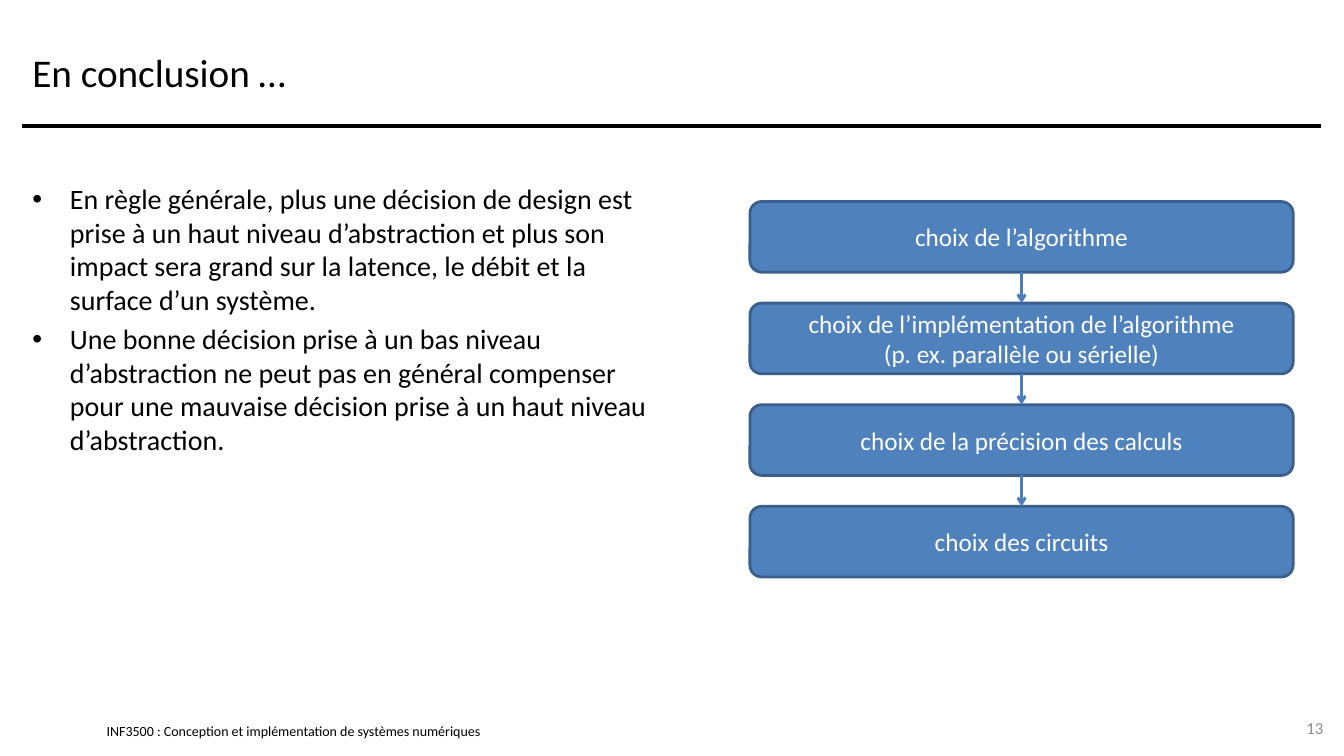
import dataclasses

import lxml.etree
import pptx
import pptx.dml.color
import pptx.enum.shapes
import pptx.enum.text
import pptx.oxml.ns
import pptx.util

Cm = pptx.util.Cm
Pt = pptx.util.Pt
Align = pptx.enum.text.PP_ALIGN
Anchor = pptx.enum.text.MSO_ANCHOR

TITLE = "En conclusion …"
CONCLUSIONS = [
    "En règle générale, plus une décision de design est prise à un haut niveau d’abstraction "
    "et plus son impact sera grand sur la latence, le débit et la surface d’un système.",
    "Une bonne décision prise à un bas niveau d’abstraction ne peut pas en général compenser "
    "pour une mauvaise décision prise à un haut niveau d’abstraction.",
]
CHOICES = [
    "choix de l’algorithme",
    "choix de l’implémentation de l’algorithme\n(p. ex. parallèle ou sérielle)",
    "choix de la précision des calculs",
    "choix des circuits",
]
COURSE = "INF3500 : Conception et implémentation de systèmes numériques"
PAGE_NUMBER = "13"

MARGIN = 0.56
CONTENT_WIDTH = 32.74
RULE_TOP = 3.18
CHOICE_LEFT, CHOICE_TOP = 18.9, 5.08
CHOICE_WIDTH, CHOICE_HEIGHT = 13.69, 1.78
CHOICE_PITCH = 2.56


@dataclasses.dataclass(frozen=True)
class Theme:
    font: str = "Calibri"
    ink: str = "000000"
    muted: str = "8C8C8C"
    light: str = "FFFFFF"
    box_fill: str = "4F81BD"
    box_line: str = "3A5F8C"
    arrow: str = "4B7EBC"
    title_size: int = 28
    body_size: int = 20
    choice_size: int = 18
    number_size: int = 12
    footer_size: int = 10
    rule_width: int = 3
    line_width: int = 2


THEME = Theme()


def rgb(value):
    return pptx.dml.color.RGBColor.from_string(value)


def place(shape, left, top, width, height):
    shape.left, shape.top = Cm(left), Cm(top)
    shape.width, shape.height = Cm(width), Cm(height)


def write(shape, texts, size, color, align=Align.LEFT, anchor=Anchor.MIDDLE):
    frame = shape.text_frame
    frame.word_wrap = True
    frame.auto_size = pptx.enum.text.MSO_AUTO_SIZE.NONE
    frame.vertical_anchor = anchor
    for index, text in enumerate(texts):
        para = frame.add_paragraph() if index else frame.paragraphs[0]
        para.text = text
        para.alignment = align
        for span in para.runs:
            span.font.name = THEME.font
            span.font.size = Pt(size)
            span.font.color.rgb = rgb(color)
    return frame


def add_line(page, start, end, color, width):
    line = page.shapes.add_connector(
        pptx.enum.shapes.MSO_CONNECTOR.STRAIGHT, *map(Cm, start + end))
    line.line.color.rgb = rgb(color)
    line.line.width = Pt(width)
    lxml.etree.SubElement(line._element.spPr, pptx.oxml.ns.qn("a:effectLst"))
    return line


def add_headings(page):
    title, body = page.placeholders
    place(title, MARGIN, 0.43, CONTENT_WIDTH, 2.74)
    write(title, [TITLE], THEME.title_size, THEME.ink)
    add_line(page, (MARGIN, RULE_TOP), (MARGIN + CONTENT_WIDTH, RULE_TOP),
             THEME.ink, THEME.rule_width)
    place(body, MARGIN, 4.45, 16.08, 12.9)
    frame = write(body, CONCLUSIONS, THEME.body_size, THEME.ink, anchor=Anchor.TOP)
    for index, para in enumerate(frame.paragraphs):
        properties = para._p.get_or_add_pPr()
        properties.set("marL", str(Cm(0.95)))
        properties.set("indent", str(-Cm(0.95)))
        para.space_before = Pt(4 if index else 0)


def add_choice(page, index, text):
    box = page.shapes.add_shape(
        pptx.enum.shapes.MSO_SHAPE.ROUNDED_RECTANGLE, Cm(CHOICE_LEFT),
        Cm(CHOICE_TOP + index * CHOICE_PITCH), Cm(CHOICE_WIDTH), Cm(CHOICE_HEIGHT))
    box.shadow.inherit = False
    box.fill.solid()
    box.fill.fore_color.rgb = rgb(THEME.box_fill)
    box.line.color.rgb = rgb(THEME.box_line)
    box.line.width = Pt(THEME.line_width)
    write(box, [text], THEME.choice_size, THEME.light, Align.CENTER)
    return box


def add_flow(page):
    boxes = [add_choice(page, index, text) for index, text in enumerate(CHOICES)]
    for upper, lower in zip(boxes, boxes[1:]):
        arrow = add_line(page, (0, 0), (0, 0), THEME.arrow, THEME.line_width)
        arrow.begin_connect(upper, 2)
        arrow.end_connect(lower, 0)
        head = lxml.etree.SubElement(arrow.line._get_or_add_ln(), pptx.oxml.ns.qn("a:tailEnd"))
        head.set("type", "arrow")


def add_footer(page):
    course = page.shapes.add_textbox(Cm(2.69), Cm(18.21), Cm(12.98), Cm(0.43))
    frame = write(course, [COURSE], THEME.footer_size, THEME.ink)
    frame.margin_left = frame.margin_right = frame.margin_top = frame.margin_bottom = 0
    number = page.shapes.add_textbox(Cm(31.9), Cm(17.83), Cm(1.7), Cm(1.02))
    write(number, [PAGE_NUMBER], THEME.number_size, THEME.muted, Align.RIGHT)


def main():
    deck = pptx.Presentation()
    deck.slide_width, deck.slide_height = Cm(33.87), Cm(19.05)
    page = deck.slides.add_slide(deck.slide_layouts[1])
    add_headings(page)
    add_flow(page)
    add_footer(page)
    deck.save("out.pptx")


if __name__ == "__main__":
    main()
